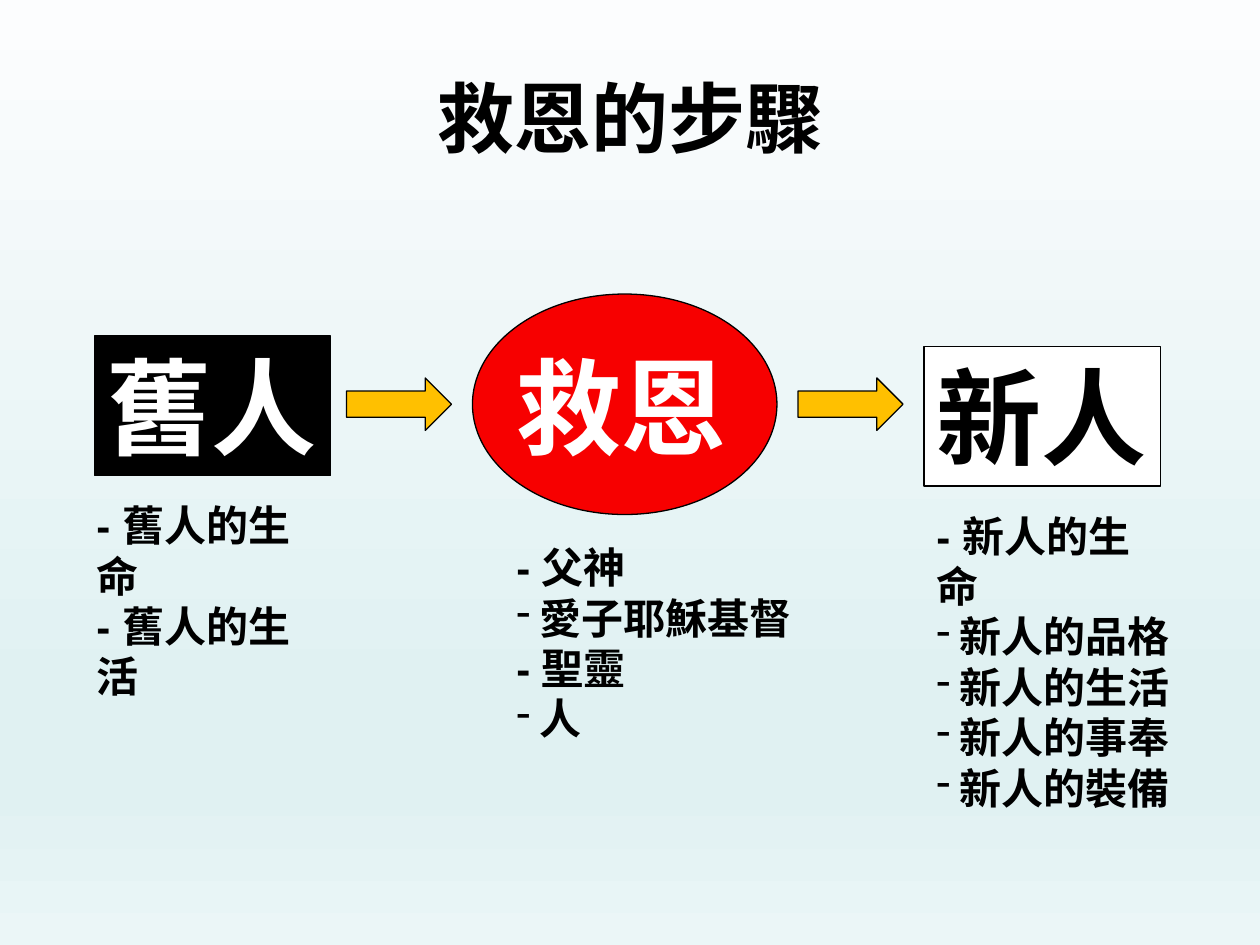
from copy import deepcopy

from pptx import Presentation
from pptx import util as u
from pptx.dml.color import RGBColor
from pptx.enum import shapes, text
from pptx.oxml.ns import qn
from lxml import etree

BLACK = RGBColor(0x00, 0x00, 0x00)
WHITE = RGBColor(0xFF, 0xFF, 0xFF)
RED = RGBColor(0xF7, 0x00, 0x00)
AMBER = RGBColor(0xFF, 0xC0, 0x00)
SKY = [
    (0, RGBColor(0xFC, 0xFD, 0xFE)),
    (0.74, RGBColor(0xE0, 0xF1, 0xF2)),
    (0.83, RGBColor(0xE0, 0xF1, 0xF2)),
    (1, RGBColor(0xEB, 0xF6, 0xF7)),
]


class SlideBuilder:
    COLUMNS, ROWS = 120, 90
    FONT = {"name": "Arial", "bold": True}

    def __init__(self):
        self.deck = Presentation()
        self.deck.slide_width = u.Inches(10)
        self.deck.slide_height = u.Inches(7.5)
        self.page = self.deck.slides.add_slide(self.deck.slide_layouts[6])

    def place(self, left, top, width, height):
        column = self.deck.slide_width / self.COLUMNS
        row = self.deck.slide_height / self.ROWS
        return [round(n) for n in (left * column, top * row, width * column, height * row)]

    def background(self, stops):
        fill = self.page.background.fill
        fill.gradient()
        fill.gradient_angle = 270
        stop_list = self.page.element.find(".//" + qn("a:gsLst"))
        while len(stop_list) < len(stops):
            stop_list.append(deepcopy(stop_list[0]))
        for stop, (position, color) in zip(fill.gradient_stops, stops):
            stop.position = position
            stop.color.rgb = color

    def shape(self, kind, area, color):
        shape = self.page.shapes.add_shape(kind, *self.place(*area))
        shape.shadow.inherit = False
        shape.fill.solid()
        shape.fill.fore_color.rgb = color
        shape.line.color.rgb = BLACK
        shape.line.width = u.Pt(0.75)
        return shape

    def textbox(self, area):
        return self.page.shapes.add_textbox(*self.place(*area))

    def fill_text(self, box, lines, size, color=BLACK, align=text.PP_ALIGN.LEFT, **frame_format):
        frame = box.text_frame
        for name, value in frame_format.items():
            setattr(frame, name, value)
        for index, line in enumerate(lines):
            para = frame.paragraphs[0] if index == 0 else frame.add_paragraph()
            para.alignment = align
            if line.startswith(" "):
                self.bullet(para)
            span = para.add_run()
            span.text = line
            for name, value in {**self.FONT, "size": u.Pt(size)}.items():
                setattr(span.font, name, value)
            span.font.color.rgb = color

    def bullet(self, para):
        properties = para._p.get_or_add_pPr()
        properties.set("marL", "0")
        properties.set("indent", "0")
        etree.SubElement(properties, qn("a:buChar")).set("char", "-")

    def title(self, line, area):
        self.fill_text(self.textbox(area), [line], 44, align=text.PP_ALIGN.CENTER,
                       word_wrap=True, vertical_anchor=text.MSO_ANCHOR.MIDDLE)

    def label(self, box, line, color):
        self.fill_text(box, [line], 60, color, word_wrap=False,
                       vertical_anchor=text.MSO_ANCHOR.TOP,
                       auto_size=text.MSO_AUTO_SIZE.SHAPE_TO_FIT_TEXT)

    def points(self, lines, area):
        self.fill_text(self.textbox(area), lines, 24, word_wrap=True,
                       auto_size=text.MSO_AUTO_SIZE.SHAPE_TO_FIT_TEXT)


def main():
    kinds = shapes.MSO_SHAPE
    slide = SlideBuilder()
    slide.background(SKY)
    slide.shape(kinds.OVAL, (45, 28, 29, 21), RED)
    slide.title("救恩的步驟", (6, 3.6, 108, 15))

    for line, left, top, fill, color in [
        ("舊人", 9, 32, BLACK, WHITE),
        ("新人", 88, 33, WHITE, BLACK),
    ]:
        slide.label(slide.shape(kinds.RECTANGLE, (left, top, 22.5, 13.3), fill), line, color)
    slide.label(slide.textbox((48, 32, 22.5, 13.3)), "救恩", WHITE)

    for left in (33, 76):
        slide.shape(kinds.RIGHT_ARROW, (left, 36, 10, 5), AMBER)

    slide.points(["- 舊人的生命", "- 舊人的生活"], (8, 47, 24.8, 15.6))
    slide.points(["- 新人的生命", " 新人的品格", " 新人的生活", " 新人的事奉", " 新人的裝備"],
                 (88, 48, 24.8, 25.2))
    slide.points(["- 父神", " 愛子耶穌基督", "- 聖靈", " 人"], (48, 51, 28.8, 20.4))
    slide.deck.save("out.pptx")


if __name__ == "__main__":
    main()
